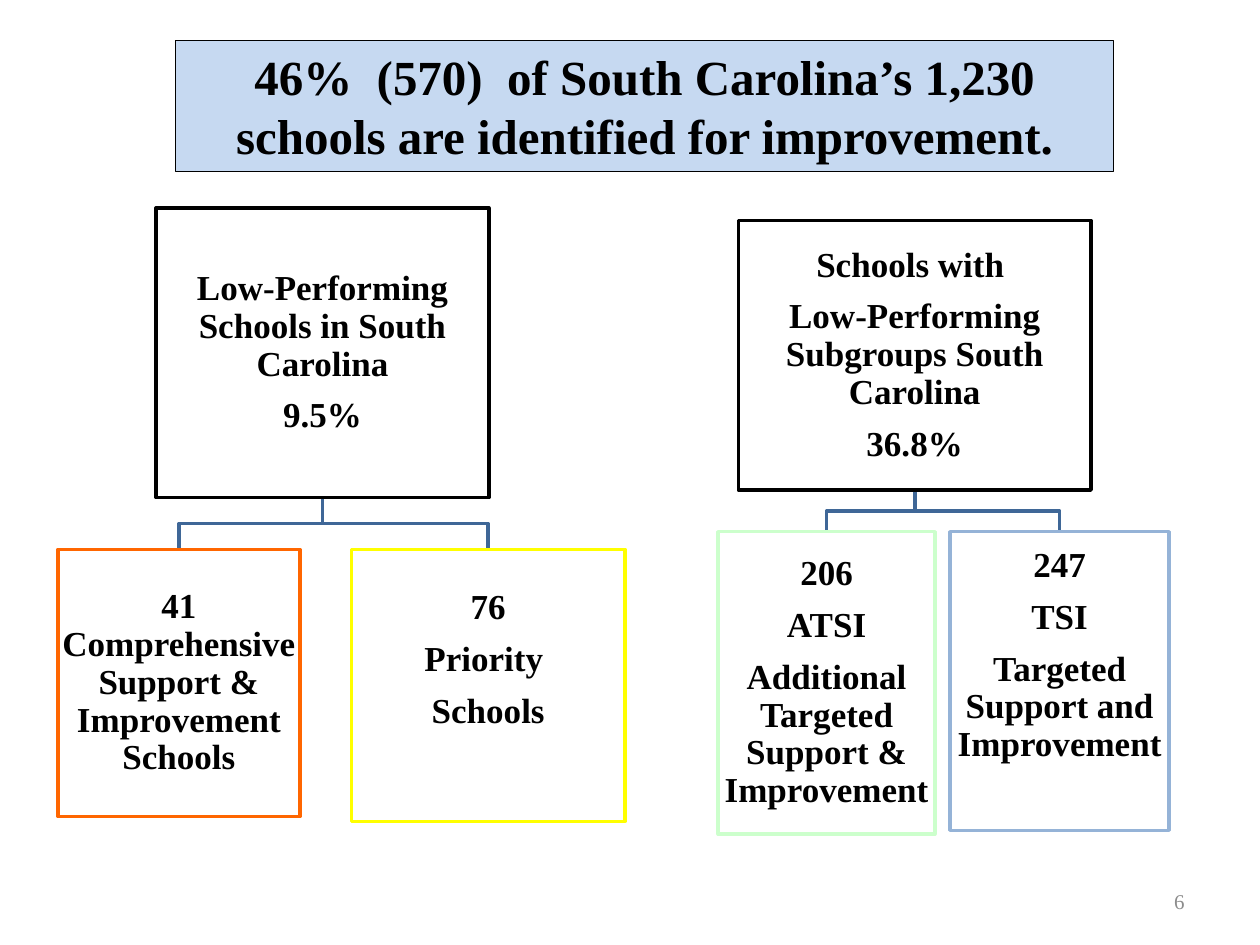
from pptx import Presentation
from pptx.dml.color import RGBColor
from pptx.enum.shapes import MSO_SHAPE as Shape
from pptx.enum.text import MSO_ANCHOR as Anchor, PP_ALIGN as Align
from pptx.util import Inches, Pt

FONT = "Times New Roman"
BLACK, WHITE, GREY = "000000", "FFFFFF", "8C8C8C"
PALE, STEEL = "C6D9F1", "3F6797"
ORANGE, YELLOW, MINT, BLUE = "FF6600", "FFFF00", "CCFFCC", "95B3D7"


def color(code):
    return RGBColor.from_string(code)


def write(frame, lines, size=20, bold=True, ink=BLACK, align=Align.CENTER,
          anchor=Anchor.MIDDLE, inset=None, foot=None, space=None, gap=0):
    """Fill a text frame; inset is for all sides, foot for the bottom alone."""
    frame.word_wrap = True
    frame.vertical_anchor = anchor
    if inset is not None:
        frame.margin_left = frame.margin_right = Inches(inset)
        frame.margin_top = frame.margin_bottom = Inches(inset)
    if foot is not None:
        frame.margin_bottom = Inches(foot)
    for i, line in enumerate(lines):
        para = frame.paragraphs[0] if i == 0 else frame.add_paragraph()
        para.alignment = align
        para.line_spacing = space
        para.space_after = Pt(gap)
        run = para.add_run()
        run.text = line
        font = run.font
        font.name, font.size, font.bold = FONT, Pt(size), bold
        font.color.rgb = color(ink)


def add_rect(slide, box, edge, width, fill=None):
    rect = slide.shapes.add_shape(Shape.RECTANGLE, *map(Inches, box))
    rect.shadow.inherit = False
    if fill:
        rect.fill.solid()
        rect.fill.fore_color.rgb = color(fill)
    else:
        rect.fill.background()
    rect.line.color.rgb = color(edge)
    rect.line.width = Pt(width)
    return rect


def add_title(slide, box, text):
    rect = add_rect(slide, box, BLACK, 0.75, PALE)
    write(rect.text_frame, [text], size=28, anchor=Anchor.TOP)


def add_card(slide, box, edge, lines, fill=None, foot=0.01):
    rect = add_rect(slide, box, edge, 2, fill)
    write(rect.text_frame, lines, inset=0.01, foot=foot, space=0.9, gap=8)


def add_link(slide, top, child):
    """Draw the elbow from the bottom of one box to the top of another."""
    x, y = top[0] + top[2] / 2, top[1] + top[3]
    end, low = child[0] + child[2] / 2, child[1]
    mid = (y + low) / 2
    build = slide.shapes.build_freeform(Inches(x), Inches(y))
    points = [(x, mid), (end, mid), (end, low)]
    build.add_line_segments([(Inches(a), Inches(b)) for a, b in points], close=False)
    link = build.convert_to_shape()
    link.shadow.inherit = False
    link.fill.background()
    link.line.color.rgb = color(STEEL)
    link.line.width = Pt(2)


def add_tree(slide, box, lines, leaves):
    """Place a parent card in box, and leaves offset from its top left."""
    left, top = box[:2]
    placed = [((left + dx, top + dy, w, h), *rest)
              for (dx, dy, w, h), *rest in leaves]
    for spot, *_ in placed:
        add_link(slide, box, spot)
    add_card(slide, box, BLACK, lines)
    for spot, edge, words, foot in placed:
        add_card(slide, spot, edge, words, WHITE, foot)


def add_number(slide, box, text):
    label = slide.shapes.add_textbox(*map(Inches, box))
    write(label.text_frame, [text], size=12, bold=False, ink=GREY, align=Align.RIGHT)


def main():
    deck = Presentation()
    deck.slide_width, deck.slide_height = Inches(10), Inches(7.5)
    slide = deck.slides.add_slide(deck.slide_layouts[6])
    add_number(slide, (7.17, 6.95, 2.33, 0.4), "6")
    add_title(slide, (1.39, 0.32, 7.45, 1.04),
              "46%  (570)  of South Carolina’s 1,230 schools are identified for improvement.")
    add_tree(slide, (1.24, 1.65, 2.64, 2.3),
             ["Low-Performing Schools in South Carolina", "9.5%"], [
        ((-0.78, 2.71, 1.92, 2.12), ORANGE,
         ["41 Comprehensive Support & Improvement Schools"], 0.01),
        ((1.55, 2.71, 2.17, 2.16), YELLOW, ["76", "Priority ", "Schools"], 0.41),
    ])
    add_tree(slide, (5.86, 1.75, 2.8, 2.14),
             ["Schools with ", "Low-Performing Subgroups South Carolina", "36.8%"], [
        ((-0.16, 2.47, 1.72, 2.4), MINT,
         ["206", "ATSI", "Additional Targeted Support & Improvement"], 0.01),
        ((1.68, 2.47, 1.74, 2.37), BLUE,
         ["247", "TSI", "Targeted Support and Improvement"], 0.41),
    ])
    deck.save("out.pptx")


if __name__ == "__main__":
    main()
